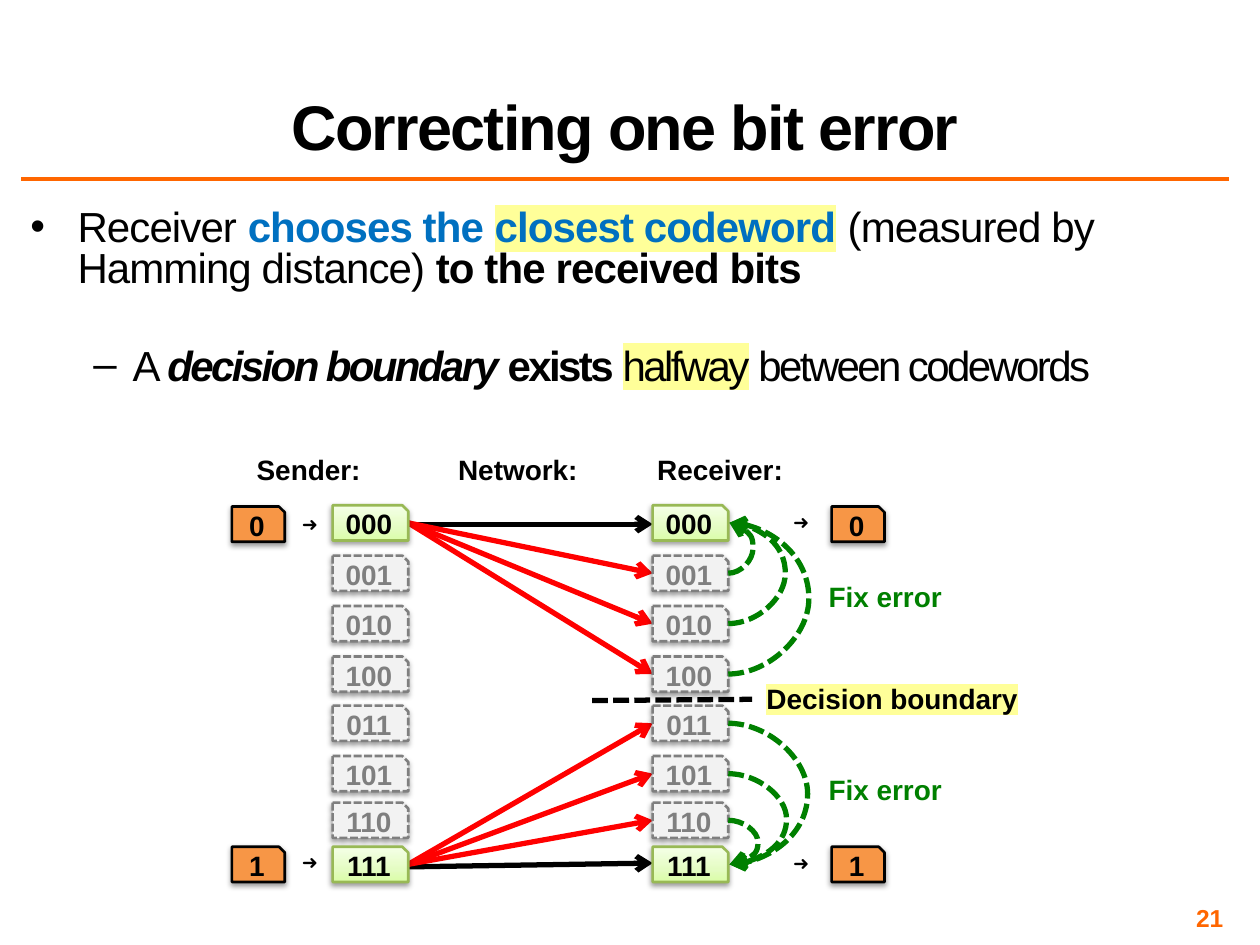
import copy
import dataclasses
import typing

import pptx
import pptx.dml.color
import pptx.enum.dml
import pptx.enum.shapes
import pptx.enum.text
import pptx.oxml.ns
import pptx.oxml.xmlchemy
import pptx.util
from lxml import etree
from pptx.dml.color import RGBColor
from pptx.util import Inches

FONT = "Arial"
BLACK = RGBColor(0x00, 0x00, 0x00)
RED = RGBColor(0xFF, 0x00, 0x00)
BLUE = RGBColor(0x00, 0x70, 0xC0)
GREEN = RGBColor(0x00, 0x80, 0x00)
ORANGE = RGBColor(0xFF, 0x66, 0x00)
BIT_FILL = RGBColor(0xF7, 0x96, 0x46)
GREY = RGBColor(0x7F, 0x7F, 0x7F)
PALE_GREY = RGBColor(0xF2, 0xF2, 0xF2)
LEAF = RGBColor(0x98, 0xB9, 0x55)
YELLOW = RGBColor(0xFF, 0xFF, 0x99)
LIME_STOPS = (
    (0, RGBColor(0xDA, 0xFD, 0xA7)),
    (0.35, RGBColor(0xE4, 0xFC, 0xC2)),
    (1, RGBColor(0xF5, 0xFF, 0xE7)),
)

CODE_TOPS = {"000": 4.01, "001": 4.41, "010": 4.81, "100": 5.21,
             "011": 5.6, "101": 6.0, "110": 6.37, "111": 6.72}
CODEWORDS = ("000", "111")
SENDER_LEFT, RECEIVER_LEFT = 2.64, 5.18
CODE_WIDTH, BIT_WIDTH, BOX_HEIGHT = 0.6, 0.42, 0.28
CURVE_SPAN = 0.01


@dataclasses.dataclass(frozen=True)
class Run:
    text: str
    size: float
    color: RGBColor = BLACK
    bold: bool = True
    italic: bool = False
    spacing: float = 0
    highlight: typing.Optional[RGBColor] = None


@dataclasses.dataclass(frozen=True)
class Label:
    run: Run
    left: float
    top: float
    width: float
    height: float = 0.37


@dataclasses.dataclass(frozen=True)
class Box:
    text: str
    left: float
    top: float
    width: float
    line: RGBColor
    text_color: RGBColor = BLACK
    fill: typing.Optional[RGBColor] = None
    dashed: bool = False


@dataclasses.dataclass(frozen=True)
class Line:
    start: tuple[float, float]
    end: tuple[float, float]
    color: RGBColor = BLACK
    width: float = 3
    arrow: bool = True
    dashed: bool = False
    peak: typing.Optional[float] = None


def add_child(parent: typing.Any, tag: str, **attributes: typing.Any) -> typing.Any:
    values = {name: str(value) for name, value in attributes.items()}
    return etree.SubElement(parent, pptx.oxml.ns.qn(tag), values)


def add_run(paragraph: typing.Any, item: Run) -> None:
    run = paragraph.add_run()
    run.text = item.text
    font = run.font
    font.name = FONT
    font.size = pptx.util.Pt(item.size)
    font.bold = item.bold
    font.italic = item.italic
    font.color.rgb = item.color
    properties = run._r.get_or_add_rPr()
    if item.spacing:
        properties.set("spc", str(round(item.spacing * 100)))
    if item.highlight is not None:
        highlight = add_child(properties, "a:highlight")
        add_child(highlight, "a:srgbClr", val=item.highlight)
        properties.find(pptx.oxml.ns.qn("a:latin")).addprevious(highlight)


def place(shape: typing.Any, left: float, top: float, width: float, height: float) -> None:
    shape.left, shape.top = Inches(left), Inches(top)
    shape.width, shape.height = Inches(width), Inches(height)


def set_margins(frame: typing.Any, horizontal: float, vertical: float) -> None:
    frame.margin_left = frame.margin_right = Inches(horizontal)
    frame.margin_top = frame.margin_bottom = Inches(vertical)


def add_label(slide: typing.Any, label: Label) -> typing.Any:
    shape = slide.shapes.add_textbox(Inches(label.left), Inches(label.top),
                                     Inches(label.width), Inches(label.height))
    shape.text_frame.word_wrap = False
    paragraph = shape.text_frame.paragraphs[0]
    paragraph.alignment = pptx.enum.text.PP_ALIGN.CENTER
    add_run(paragraph, label.run)
    return shape


def fill_lime(shape: typing.Any) -> None:
    shape.fill.gradient()
    shape.fill.gradient_angle = 90
    stop_list = shape.element.find(".//" + pptx.oxml.ns.qn("a:gsLst"))
    stop_list.append(copy.deepcopy(stop_list[0]))
    for stop, (position, color) in zip(shape.fill.gradient_stops, LIME_STOPS):
        stop.position = position
        stop.color.rgb = color


def add_box(slide: typing.Any, box: Box) -> None:
    shape = slide.shapes.add_shape(
        pptx.enum.shapes.MSO_SHAPE.SNIP_1_RECTANGLE, Inches(box.left), Inches(box.top),
        Inches(box.width), Inches(BOX_HEIGHT))
    if box.fill is None:
        fill_lime(shape)
    else:
        shape.fill.solid()
        shape.fill.fore_color.rgb = box.fill
    shape.line.color.rgb = box.line
    shape.line.width = pptx.util.Pt(1.5)
    if box.dashed:
        shape.line.dash_style = pptx.enum.dml.MSO_LINE.SQUARE_DOT
    shape.shadow.inherit = False
    effects = shape.element.spPr.find(pptx.oxml.ns.qn("a:effectLst"))
    shadow = add_child(effects, "a:outerShdw", blurRad=pptx.util.Pt(3.1),
                       dist=pptx.util.Pt(1.6), dir=5400000, rotWithShape=0)
    add_child(add_child(shadow, "a:srgbClr", val=BLACK), "a:alpha", val=38000)
    frame = shape.text_frame
    set_margins(frame, 0.1, 0)
    frame.vertical_anchor = pptx.enum.text.MSO_ANCHOR.BOTTOM
    frame.paragraphs[0].alignment = pptx.enum.text.PP_ALIGN.CENTER
    add_run(frame.paragraphs[0], Run(box.text, 16, box.text_color))


def add_line(slide: typing.Any, line: Line) -> None:
    kinds = pptx.enum.shapes.MSO_CONNECTOR
    kind = kinds.STRAIGHT if line.peak is None else kinds.CURVE
    connector = slide.shapes.add_connector(kind, *map(Inches, line.start + line.end))
    connector.line.color.rgb = line.color
    connector.line.width = pptx.util.Pt(line.width)
    if line.dashed:
        connector.line.dash_style = pptx.enum.dml.MSO_LINE.SQUARE_DOT
    if line.arrow:
        add_child(connector.line._get_or_add_ln(), "a:tailEnd", type="arrow")
    properties = connector.element.spPr
    if line.peak is not None:
        bulge = round((line.peak - line.start[0]) / CURVE_SPAN * 100000)
        adjustments = properties.find(".//" + pptx.oxml.ns.qn("a:avLst"))
        add_child(adjustments, "a:gd", name="adj1", fmla=f"val {bulge}")
    add_child(properties, "a:effectLst")


def code_middle(code: str) -> float:
    return CODE_TOPS[code] + BOX_HEIGHT / 2


def add_text(slide: typing.Any) -> None:
    title = slide.shapes.title
    place(title, 0.17, 0.17, 9.58, 1.17)
    title.text_frame.vertical_anchor = pptx.enum.text.MSO_ANCHOR.BOTTOM
    title.text_frame.auto_size = pptx.enum.text.MSO_AUTO_SIZE.NONE
    heading = title.text_frame.paragraphs[0]
    heading.alignment = pptx.enum.text.PP_ALIGN.CENTER
    heading.line_spacing = 0.8
    add_run(heading, Run("Correcting one bit error", 36, spacing=-1))

    body = slide.placeholders[1]
    place(body, 0.2, 1.63, 9.56, 1.64)
    frame = body.text_frame
    frame.auto_size = pptx.enum.text.MSO_AUTO_SIZE.NONE
    set_margins(frame, 0.04, 0.04)
    bullets = (
        (0, 4.8, (
            Run("Receiver ", 24, bold=False, spacing=-0.5),
            Run("chooses the ", 24, BLUE, spacing=-0.5),
            Run("closest codeword", 24, BLUE, spacing=-0.5, highlight=YELLOW),
            Run(" ", 24, BLUE, spacing=-0.5),
            Run("(measured by Hamming distance) ", 24, bold=False, spacing=-0.5),
            Run("to the received bits", 24, spacing=-0.5))),
        (1, 33, (
            Run("A ", 24, bold=False, spacing=-1.5),
            Run("decision boundary ", 24, italic=True, spacing=-1.5),
            Run("exists ", 24, spacing=-1.5),
            Run("halfway", 24, bold=False, spacing=-1.5, highlight=YELLOW),
            Run(" between codewords", 24, bold=False, spacing=-1.5))),
    )
    for index, (level, space, runs) in enumerate(bullets):
        paragraph = frame.add_paragraph() if index else frame.paragraphs[0]
        paragraph.level = level
        paragraph.line_spacing = 0.8
        paragraph.space_before = pptx.util.Pt(space)
        for run in runs:
            add_run(paragraph, run)

    number = add_label(slide, Label(Run("21", 14, ORANGE), 7.42, 7.17, 2.33, 0.23))
    number.text_frame.word_wrap = True
    set_margins(number.text_frame, 0.04, 0.04)
    number.text_frame.vertical_anchor = pptx.enum.text.MSO_ANCHOR.MIDDLE
    number.text_frame.paragraphs[0].alignment = pptx.enum.text.PP_ALIGN.RIGHT


def add_diagram(slide: typing.Any) -> None:
    start = SENDER_LEFT + CODE_WIDTH
    add_line(slide, Line((start, 4.16), (RECEIVER_LEFT, 4.16)))
    add_line(slide, Line((start, 6.88), (RECEIVER_LEFT, 6.85)))
    for source, codes in (("111", ("011", "101", "110")), ("000", ("001", "010", "100"))):
        for code in codes:
            add_line(slide, Line((start, code_middle(source)),
                                 (RECEIVER_LEFT, code_middle(code)), RED))
    for left in (RECEIVER_LEFT, SENDER_LEFT):
        for code, top in CODE_TOPS.items():
            if code in CODEWORDS:
                add_box(slide, Box(code, left, top, CODE_WIDTH, LEAF))
            else:
                add_box(slide, Box(code, left, top, CODE_WIDTH, GREY, GREY, PALE_GREY, True))
    for left in (1.84, 6.6):
        for text, top in (("0", 4.02), ("1", 6.72)):
            add_box(slide, Box(text, left, top, BIT_WIDTH, BLACK, fill=BIT_FILL))

    edge = RECEIVER_LEFT + CODE_WIDTH
    fixes = (("001", "000", 5.98), ("010", "000", 6.24), ("100", "000", 6.43),
             ("011", "111", 6.42), ("101", "111", 6.25), ("110", "111", 6.02))
    for code, codeword, peak in fixes:
        add_line(slide, Line((edge, code_middle(code)),
                             (edge + CURVE_SPAN, code_middle(codeword)),
                             GREEN, dashed=True, peak=peak))
    add_line(slide, Line((4.7, 5.56), (5.97, 5.55), arrow=False, dashed=True))

    for left, top in ((2.28, 4.02), (2.28, 6.7), (6.18, 4.0), (6.18, 6.71)):
        add_label(slide, Label(Run("➜", 11), left, top, 0.36, 0.29))
    for label in (
        Label(Run("Sender:", 16), 1.93, 3.54, 1.04),
        Label(Run("Network:", 16), 3.52, 3.54, 1.18),
        Label(Run("Receiver:", 16), 5.11, 3.54, 1.21),
        Label(Run("Fix error", 16, GREEN), 6.47, 4.55, 1.11),
        Label(Run("Fix error", 16, GREEN), 6.47, 6.08, 1.11),
        Label(Run("Decision boundary", 16, highlight=YELLOW), 5.97, 5.36, 2.22),
    ):
        add_label(slide, label)


def main() -> None:
    presentation = pptx.Presentation()
    presentation.slide_width, presentation.slide_height = Inches(10), Inches(7.5)
    slide = presentation.slides.add_slide(presentation.slide_layouts[1])
    add_line(slide, Line((0.17, 1.42), (9.75, 1.42), ORANGE, 2, arrow=False))
    add_text(slide)
    add_diagram(slide)
    presentation.save("out.pptx")


if __name__ == "__main__":
    main()
